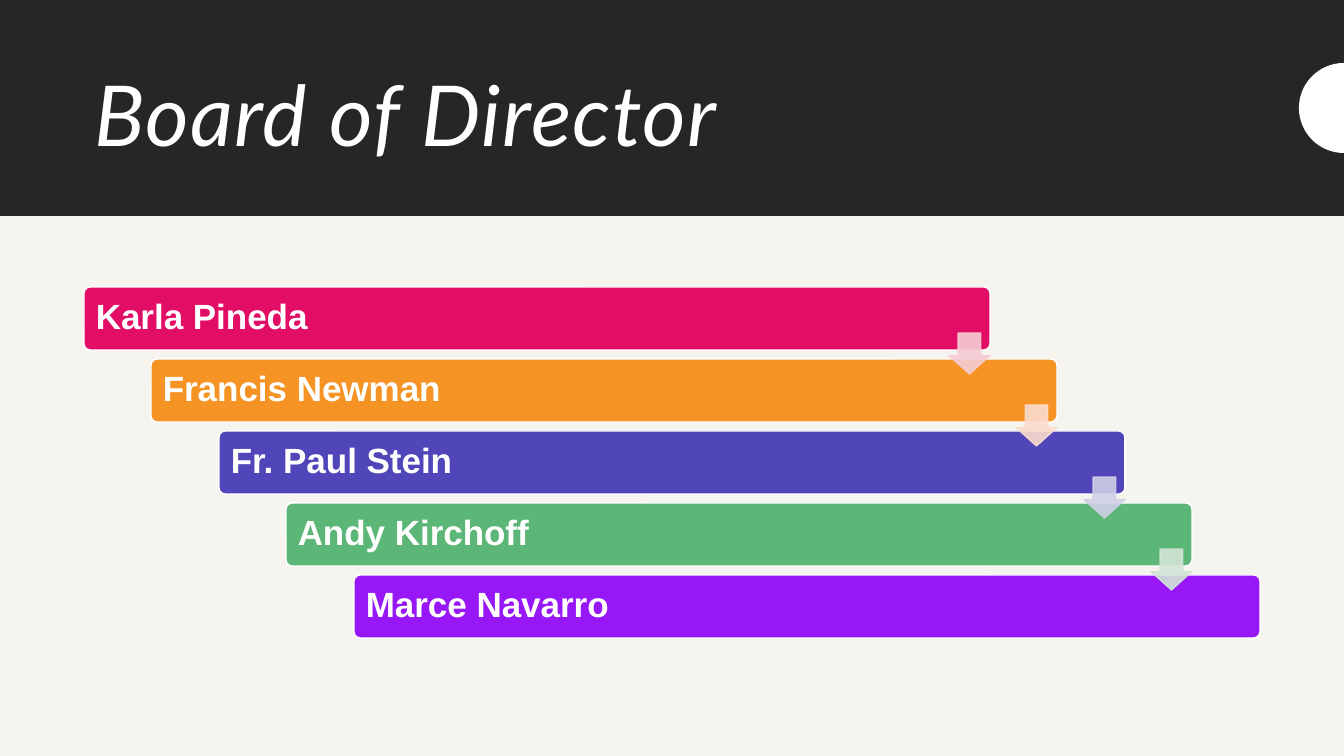
import math

import pptx
import pptx.dml.color
import pptx.enum.shapes
import pptx.enum.text
import pptx.oxml
import pptx.oxml.ns
import pptx.util

SCALE = 12192000 / 1344
COLORS = {"paper": "F6F4EF", "band": "262626", "white": "FFFFFF"}
DIRECTORS = [
    ("Karla Pineda", "E20E65", "F4CCD3"),
    ("Francis Newman", "F59324", "FBDCCD"),
    ("Fr. Paul Stein", "5046B9", "D0CFE6"),
    ("Andy Kirchoff", "5CB678", "D2E5D6"),
    ("Marce Navarro", "9717F7", None),
]
SHAPES = pptx.enum.shapes.MSO_SHAPE


def px(length):
    return pptx.util.Emu(round(length * SCALE))


def rgb(color):
    return pptx.dml.color.RGBColor.from_string(color)


class SlideBuilder:
    """Draws styled elements on the current slide."""

    def __init__(self, presentation):
        self.slide = presentation.slides.add_slide(presentation.slide_layouts[5])
        background = self.slide.background.fill
        background.solid()
        background.fore_color.rgb = rgb(COLORS["paper"])

    def paint(self, shape, fill, line=None, opacity=None):
        shape.shadow.inherit = False
        shape.fill.solid()
        shape.fill.fore_color.rgb = rgb(fill)
        if line:
            shape.line.color.rgb = rgb(line)
            shape.line.width = pptx.util.Pt(1)
        else:
            shape.line.fill.background()
        if opacity:
            for color in shape.element.spPr.iter(pptx.oxml.ns.qn("a:srgbClr")):
                alpha = pptx.oxml.parse_xml(
                    f'<a:alpha {pptx.oxml.ns.nsdecls("a")} val="{opacity * 1000}"/>')
                color.append(alpha)

    def block(self, kind, box, fill, line=None, opacity=None, adjustments=()):
        shape = self.slide.shapes.add_shape(kind, *map(px, box))
        for index, value in enumerate(adjustments):
            shape.adjustments[index] = value
        self.paint(shape, fill, line, opacity)
        return shape

    def label(self, shape, text, inset, font):
        frame = shape.text_frame
        settings = {
            "word_wrap": True,
            "auto_size": pptx.enum.text.MSO_AUTO_SIZE.NONE,
            "vertical_anchor": pptx.enum.text.MSO_ANCHOR.MIDDLE,
            "margin_left": px(inset),
            "margin_right": px(inset),
        }
        for name, value in settings.items():
            setattr(frame, name, value)
        paragraph = frame.paragraphs[0]
        paragraph.alignment = pptx.enum.text.PP_ALIGN.LEFT
        paragraph.line_spacing = 0.9
        run = paragraph.add_run()
        run.text = text
        for name, value in font.items():
            setattr(run.font, name, value)
        run.font.color.rgb = rgb(COLORS["white"])

    def title(self, text, box):
        title = self.slide.shapes.title
        title.left, title.top, title.width, title.height = map(px, box)
        font = {"name": "Lato", "size": pptx.util.Pt(60), "italic": True}
        self.label(title, text, 10, font)
        for properties in title.element.iter(pptx.oxml.ns.qn("a:rPr")):
            properties.set("spc", "100")
        title.element.getparent().append(title.element)

    def half_circle(self, center_x, center_y, radius, fill):
        angles = [math.pi * (0.5 + step / 48) for step in range(49)]
        points = [(px(center_x + radius * math.cos(angle)),
                   px(center_y - radius * math.sin(angle))) for angle in angles]
        outline = self.slide.shapes.build_freeform(*points[0])
        outline.add_line_segments(points[1:], close=True)
        self.paint(outline.convert_to_shape(), fill)

    def name_bar(self, name, left, top, fill):
        bar = self.block(SHAPES.ROUNDED_RECTANGLE, (left, top, 906, 63), fill,
                         COLORS["white"], adjustments=[0.1])
        font = {"name": "Arial", "size": pptx.util.Pt(25), "bold": True}
        self.label(bar, name, 10, font)

    def arrow(self, left, top, color):
        self.block(SHAPES.DOWN_ARROW, (left, top, 41, 41), color, color, 90, [0.55, 0.45])


def main():
    presentation = pptx.Presentation()
    presentation.slide_width, presentation.slide_height = px(1344), px(756)
    builder = SlideBuilder(presentation)
    builder.block(SHAPES.RECTANGLE, (0, 0, 1344, 216), COLORS["band"])
    builder.title("Board of Director", (84, 46, 1176, 146))
    builder.half_circle(1344, 108, 45, COLORS["white"])

    places = [(84 + index * 270 // 4, 287 + index * 72) for index in range(len(DIRECTORS))]
    for (name, fill, _), (left, top) in zip(DIRECTORS, places):
        builder.name_bar(name, left, top, fill)
    for (_, _, color), (left, top) in zip(DIRECTORS[:-1], places):
        builder.arrow(left + 865, top + 46, color)
    presentation.save("out.pptx")


if __name__ == "__main__":
    main()
